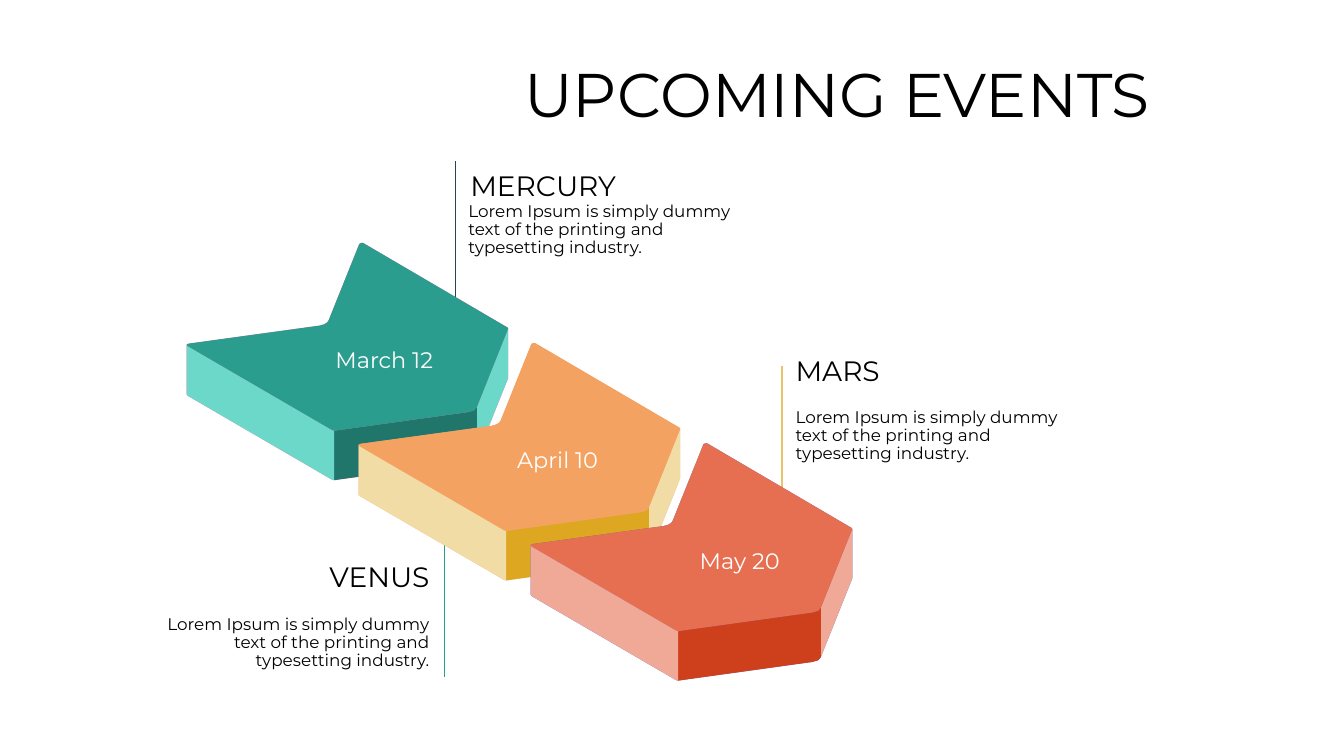
from lxml.etree import SubElement
from pptx import Presentation
from pptx.dml.color import RGBColor
from pptx.enum.shapes import MSO_CONNECTOR
from pptx.enum.text import MSO_ANCHOR, MSO_AUTO_SIZE, PP_ALIGN
from pptx.oxml.ns import qn
from pptx.util import Cm, Pt

# Content: positions and sizes in cm
TITLE = "UPCOMING EVENTS"
BLURB = "Lorem Ipsum is simply dummy text of the printing and typesetting industry."
EVENTS = [
    {"name": "MERCURY", "date": "March 12", "align": PP_ALIGN.LEFT,
     "name_at": (23.01, 8.0), "blurb_at": (22.91, 9.55), "date_at": (14.78, 16.51),
     "rule": (22.96, 8.1, 16.1), "rule_color": "264653",
     "base": "FF66A7", "top": "2A9D8F", "side": "6CD8CA", "front": "20766B"},
    {"name": "VENUS", "date": "April 10", "align": PP_ALIGN.RIGHT,
     "name_at": (10.77, 27.71), "blurb_at": (6.65, 30.33), "date_at": (23.52, 21.56),
     "rule": (22.4, 22.4, 34.11), "rule_color": "2A9D8F",
     "base": "F4A261", "top": "F4A261", "side": "F2DCA6", "front": "DEA721"},
    {"name": "MARS", "date": "May 20", "align": PP_ALIGN.LEFT,
     "name_at": (39.4, 17.3), "blurb_at": (39.4, 19.91), "date_at": (32.69, 26.62),
     "rule": (39.42, 18.44, 30.15), "rule_color": "E9C46A",
     "base": "5C5CC4", "top": "E76F51", "side": "F1A997", "front": "CE401C"},
]
FONT = "Montserrat"
INSET = 0.69
NAME_SIZE, BLURB_SIZE, DATE_SIZE = (11.56, 4.29), (15.67, 4.8), (9.17, 3.4)

# Arrow block: clockwise outline of the top face, from the upper corner
FIRST_ARROW, ARROW_STEP, DEPTH = (9.4, 12.24), (8.67, 5.05), 2.49
TOP_FACE = [(8.71, 0.05), (8.81, 0), (8.89, 0), (16.18, 4.27), (16.21, 4.32),
            (14.63, 8.28), (14.5, 8.44), (14.2, 8.53), (7.44, 9.47), (7.34, 9.45),
            (0.05, 5.21), (0, 5.13), (0.1, 5.08), (6.71, 4.17), (6.93, 4.11),
            (7.09, 4.01), (7.16, 3.91)]
EAST, TIP, SOUTH, WEST = 4, 5, 8, 11


def rgb(color):
    return RGBColor.from_string(color)


def lowered(points):
    return [(x, y + DEPTH) for x, y in points]


def wall(first, last):
    edge = TOP_FACE[first:last + 1]
    return edge + lowered(reversed(edge))


def write(frame, text, size, color="000000", align=PP_ALIGN.LEFT,
          anchor=MSO_ANCHOR.TOP, before=0, after=0):
    frame.word_wrap = True
    frame.auto_size = MSO_AUTO_SIZE.NONE
    frame.vertical_anchor = anchor
    frame.margin_left = frame.margin_right = Cm(INSET)
    frame.margin_top = frame.margin_bottom = Cm(INSET)
    frame.text = text
    paragraph = frame.paragraphs[0]
    paragraph.alignment = align
    paragraph.line_spacing = 0.9
    paragraph.space_before, paragraph.space_after = Pt(before), Pt(after)
    paragraph.font.name, paragraph.font.size = FONT, Pt(size)
    paragraph.font.color.rgb = rgb(color)


def add_text(slide, at, box_size, text, size, **style):
    box = slide.shapes.add_textbox(*(Cm(v) for v in at + box_size))
    write(box.text_frame, text, size, **style)


def add_rule(slide, x, top, bottom, color):
    rule = slide.shapes.add_connector(MSO_CONNECTOR.STRAIGHT,
                                      Cm(x), Cm(bottom), Cm(x), Cm(top))
    rule.line.color.rgb = rgb(color)
    rule.line.width = Pt(2.25)
    SubElement(rule._element.spPr, qn("a:effectLst"))


def add_face(block, origin, points, color):
    corners = [(Cm(origin[0] + x), Cm(origin[1] + y)) for x, y in points]
    builder = block.shapes.build_freeform(*corners[0])
    builder.add_line_segments(corners[1:], close=True)
    face = builder.convert_to_shape()
    face.shadow.inherit = False
    face.fill.solid()
    face.fill.fore_color.rgb = rgb(color)
    face.line.fill.background()


def add_arrow(slide, origin, event):
    block = slide.shapes.add_group_shape()
    silhouette = (TOP_FACE[:EAST + 1] + lowered(TOP_FACE[EAST:WEST + 1])
                  + TOP_FACE[WEST:])
    for points, part in ((silhouette, "base"), (wall(EAST, TIP), "side"),
                         (wall(TIP, SOUTH), "front"), (TOP_FACE, "top"),
                         (wall(SOUTH, WEST), "side")):
        add_face(block, origin, points, event[part])


def main():
    deck = Presentation()
    deck.slide_width, deck.slide_height = Cm(67.73), Cm(38.1)
    slide = deck.slides.add_slide(deck.slide_layouts[5])

    # Title
    title = slide.shapes.title
    title.left, title.top, title.width, title.height = (
        Cm(25.73), Cm(2.54), Cm(37.47), Cm(6.3))
    write(title.text_frame, TITLE, 88)

    # Leader lines lie behind the arrows
    for event in EVENTS:
        add_rule(slide, *event["rule"], event["rule_color"])

    # Arrows step down to the right
    for step, event in enumerate(EVENTS):
        origin = [start + step * gap for start, gap in zip(FIRST_ARROW, ARROW_STEP)]
        add_arrow(slide, origin, event)

    # Dates, names and descriptions
    for event in EVENTS:
        add_text(slide, event["date_at"], DATE_SIZE, event["date"], 32, color="FFFFFF",
                 align=PP_ALIGN.CENTER, anchor=MSO_ANCHOR.MIDDLE)
        add_text(slide, event["name_at"], NAME_SIZE, event["name"], 40,
                 align=event["align"])
        add_text(slide, event["blurb_at"], BLURB_SIZE, BLURB, 24,
                 align=event["align"], before=20, after=42.7)

    deck.save("out.pptx")


if __name__ == "__main__":
    main()
